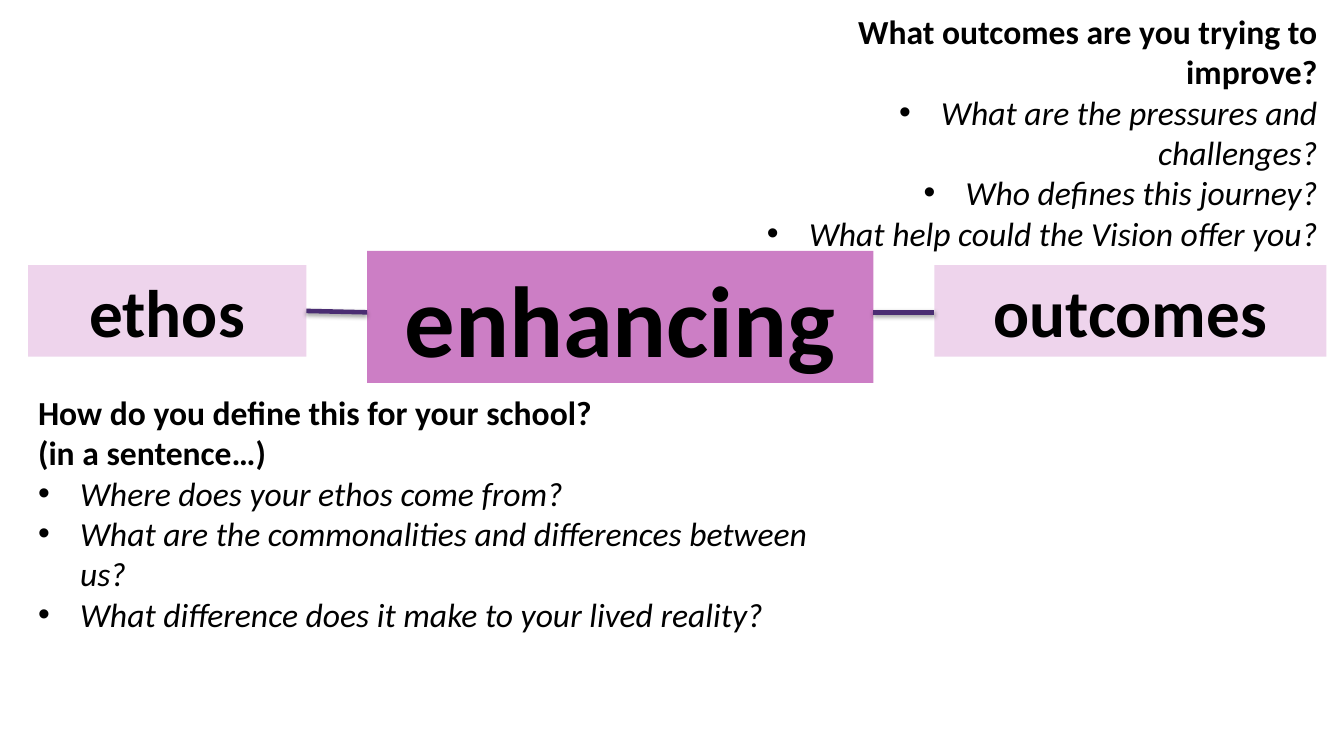
from dataclasses import dataclass

from lxml import etree
from pptx import Presentation
from pptx import util as u
from pptx.dml.color import RGBColor
from pptx.enum import shapes, text
from pptx.oxml import ns


@dataclass(frozen=True)
class Theme:
    font: str = "Calibri"
    ink: RGBColor = RGBColor(0x00, 0x00, 0x00)
    pale: RGBColor = RGBColor(0xEE, 0xD4, 0xEC)
    strong: RGBColor = RGBColor(0xCC, 0x7E, 0xC5)
    line: RGBColor = RGBColor(0x4A, 0x2D, 0x72)
    body: int = 24
    label: int = 48
    focus: int = 72


theme = Theme()


def add_span(para, words, size, bold=True):
    span = para.add_run()
    span.text = words
    span.font.name = theme.font
    span.font.size = u.Pt(size)
    span.font.bold = bold
    span.font.italic = not bold
    span.font.color.rgb = theme.ink


def add_label(page, words, left, top, width, height, fill, size):
    box = page.shapes.add_shape(
        shapes.MSO_SHAPE.RECTANGLE, u.Cm(left), u.Cm(top), u.Cm(width), u.Cm(height)
    )
    box.shadow.inherit = False
    box.fill.solid()
    box.fill.fore_color.rgb = fill
    box.line.fill.background()
    para = box.text_frame.paragraphs[0]
    para.alignment = text.PP_ALIGN.CENTER
    add_span(para, words, size)
    return box


deck = Presentation()
deck.slide_width, deck.slide_height = u.Cm(33.87), u.Cm(19.05)
page = deck.slides.add_slide(deck.slide_layouts[6])

ethos = add_label(page, "ethos", 0.71, 6.68, 7.01, 2.31, theme.pale, theme.label)
add_label(page, "outcomes", 23.55, 6.68, 9.88, 2.31, theme.pale, theme.label)

question_boxes = [
    (
        (0.71, 9.75, 20.32, 6.4),
        text.PP_ALIGN.LEFT,
        ["How do you define this for your school?", "(in a sentence…)"],
        [
            "Where does your ethos come from?",
            "What are the commonalities and differences between us?",
            "What difference does it make to your lived reality?",
        ],
    ),
    (
        (18.24, 0.15, 15.21, 6.4),
        text.PP_ALIGN.RIGHT,
        ["What outcomes are you trying to improve?"],
        [
            "What are the pressures and challenges?",
            "Who defines this journey?",
            "What help could the Vision offer you?",
        ],
    ),
]
for place, alignment, headings, questions in question_boxes:
    frame = page.shapes.add_textbox(*map(u.Cm, place)).text_frame
    frame.word_wrap = True
    for index, words in enumerate(headings + questions):
        para = frame.add_paragraph() if index else frame.paragraphs[0]
        para.alignment = alignment
        is_heading = index < len(headings)
        if not is_heading:
            props = para._p.get_or_add_pPr()
            props.set("marL", str(u.Cm(1.06)))
            props.set("indent", str(-u.Cm(1.06)))
            etree.SubElement(props, ns.qn("a:buFont"), typeface="Arial")
            etree.SubElement(props, ns.qn("a:buChar"), char="•")
        add_span(para, words, theme.body, bold=is_heading)

add_label(page, "enhancing", 9.25, 6.32, 12.76, 3.33, theme.strong, theme.focus)

links = []
for start, end in [(7.72, 9.25), (22.01, 23.55)]:
    link = page.shapes.add_connector(
        shapes.MSO_CONNECTOR.STRAIGHT, u.Cm(start), u.Cm(7.87), u.Cm(end), u.Cm(7.87)
    )
    link.line.color.rgb = theme.line
    link.line.width = u.Pt(3.25)
    effects = etree.SubElement(link._element.spPr, ns.qn("a:effectLst"))
    shadow = etree.SubElement(
        effects,
        ns.qn("a:outerShdw"),
        blurRad=str(u.Pt(3.1)),
        dist=str(u.Pt(1.6)),
        dir="5400000",
        rotWithShape="0",
    )
    shade = etree.SubElement(shadow, ns.qn("a:srgbClr"), val=str(theme.ink))
    etree.SubElement(shade, ns.qn("a:alpha"), val="38000")
    links.append(link)
links[0].begin_connect(ethos, 3)

deck.save("out.pptx")
